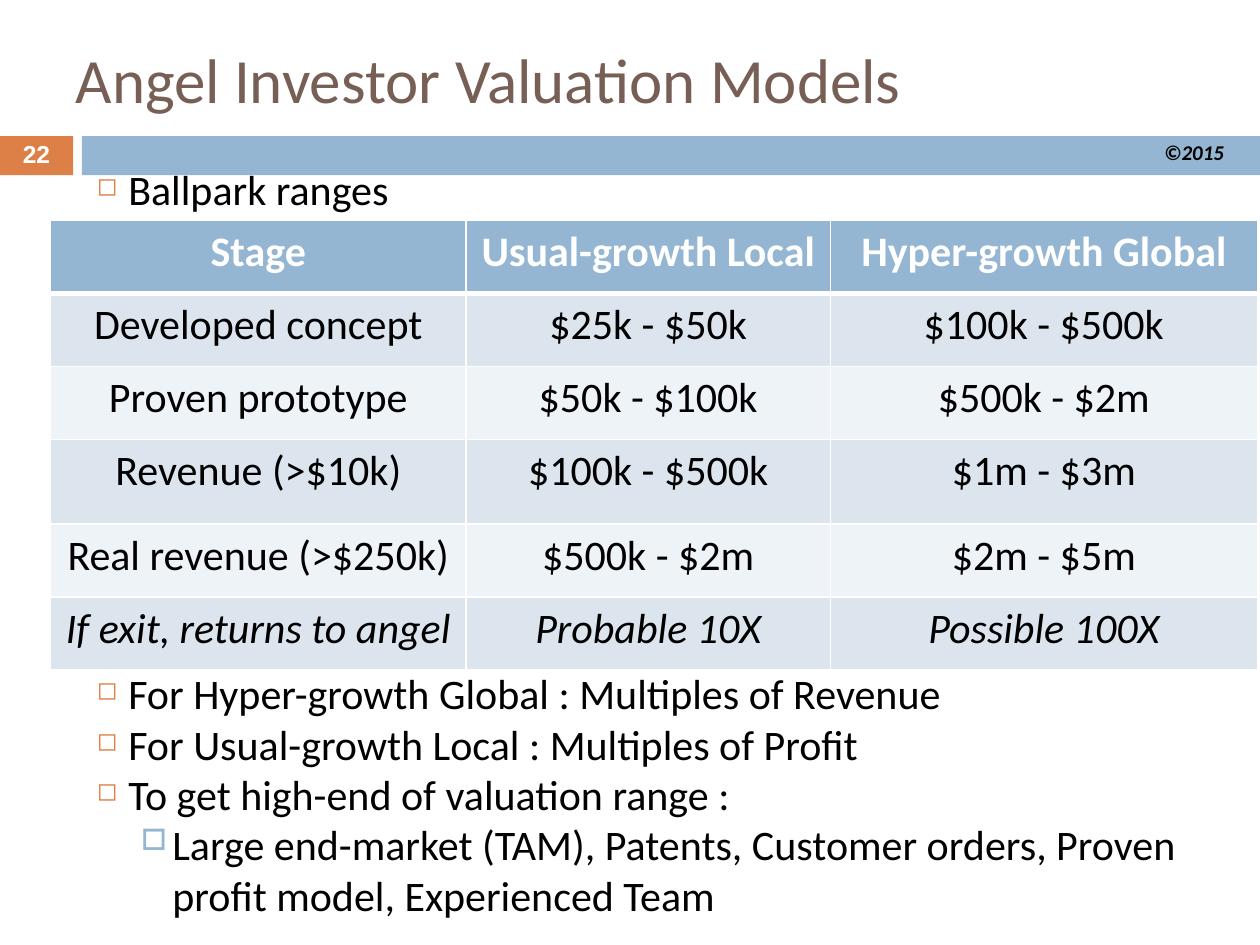
"""Build the angel investor valuation slide with its table of ballpark ranges."""
from dataclasses import dataclass

from lxml import etree
from pptx import Presentation
from pptx import util as u
from pptx.dml.color import RGBColor
from pptx.enum import shapes, text
from pptx.oxml import ns


@dataclass(frozen=True)
class Theme:
    font: str = "Calibri"
    number_font: str = "Arial"
    brown: str = "775F55"
    orange: str = "DD8047"
    blue: str = "94B6D2"
    dark_band: str = "DCE5EE"
    light_band: str = "EEF3F7"
    black: str = "000000"
    white: str = "FFFFFF"
    title_size: int = 36
    body_size: int = 24
    number_size: int = 14
    copyright_size: int = 12


theme = Theme()
Inches = u.Inches


def write(paragraph, words, size=theme.body_size, color=theme.black, font=theme.font,
          bold=False, italic=False, align=text.PP_ALIGN.LEFT, spacing=None, bullet=None):
    paragraph.alignment = align
    if spacing:
        paragraph.line_spacing = spacing
    run = paragraph.add_run()
    run.text = words
    run.font.name, run.font.size = font, u.Pt(size)
    run.font.bold, run.font.italic = bold, italic
    run.font.color.rgb = RGBColor.from_string(color)
    if bullet:
        character, bullet_color, percent, indent = bullet
        properties = paragraph._p.get_or_add_pPr()
        properties.set("marL", str(Inches(indent)))
        properties.set("indent", str(Inches(-0.25)))
        color_element = etree.SubElement(properties, ns.qn("a:buClr"))
        etree.SubElement(color_element, ns.qn("a:srgbClr"), val=bullet_color)
        etree.SubElement(properties, ns.qn("a:buSzPct"), val=str(percent * 1000))
        etree.SubElement(properties, ns.qn("a:buChar"), char=character)


def add_border(cell, side, width):
    line = etree.SubElement(cell._tc.get_or_add_tcPr(), ns.qn(f"a:ln{side}"), w=str(u.Pt(width)))
    fill = etree.SubElement(line, ns.qn("a:solidFill"))
    etree.SubElement(fill, ns.qn("a:srgbClr"), val=theme.white)


presentation = Presentation()
presentation.slide_width, presentation.slide_height = Inches(10), Inches(7.5)
slide = presentation.slides.add_slide(presentation.slide_layouts[5])

for left, width, color in [(0, 0.58, theme.orange), (0.65, 9.35, theme.blue)]:
    bar = slide.shapes.add_shape(shapes.MSO_SHAPE.RECTANGLE, Inches(left), Inches(1.08),
                                 Inches(width), Inches(0.31))
    bar.shadow.inherit = False
    bar.fill.solid()
    bar.fill.fore_color.rgb = RGBColor.from_string(color)
    bar.line.fill.background()

title = slide.shapes.title
title.left, title.top, title.width, title.height = Inches(0.5), 0, Inches(9.75), Inches(1.25)
title.text_frame.vertical_anchor = text.MSO_ANCHOR.MIDDLE
write(title.text_frame.paragraphs[0], "Angel Investor Valuation Models",
      size=theme.title_size, color=theme.brown)

main_bullet = ("◻", theme.orange, 60, 0.25)
sub_bullet = ("□", theme.blue, 70, 0.6)
body = [
    (1.25, 0.5, [("Ballpark ranges", main_bullet)]),
    (5.25, 2.1, [
        ("For Hyper-growth Global : Multiples of Revenue", main_bullet),
        ("For Usual-growth Local : Multiples of Profit", main_bullet),
        ("To get high-end of valuation range :", main_bullet),
        ("Large end-market (TAM), Patents, Customer orders, Proven profit model, "
         "Experienced Team", sub_bullet),
    ]),
]
for top, height, items in body:
    frame = slide.shapes.add_textbox(Inches(0.67), Inches(top), Inches(9.17),
                                     Inches(height)).text_frame
    frame.word_wrap = True
    for index, (words, bullet) in enumerate(items):
        paragraph = frame.add_paragraph() if index else frame.paragraphs[0]
        write(paragraph, words, bullet=bullet)

number = slide.shapes.add_textbox(0, Inches(1.11), Inches(0.58), Inches(0.27)).text_frame
number.word_wrap = True
number.vertical_anchor = text.MSO_ANCHOR.MIDDLE
write(number.paragraphs[0], "22", size=theme.number_size, color=theme.white,
      font=theme.number_font, bold=True, align=text.PP_ALIGN.CENTER, spacing=0.7)

rows = [
    ("Stage", "Usual-growth Local", "Hyper-growth Global"),
    ("Developed concept", "$25k - $50k", "$100k - $500k"),
    ("Proven prototype", "$50k - $100k", "$500k - $2m"),
    ("Revenue (>$10k)", "$100k - $500k", "$1m - $3m"),
    ("Real revenue (>$250k)", "$500k - $2m", "$2m - $5m"),
    ("If exit, returns to angel", "Probable 10X", "Possible 100X"),
]
table = slide.shapes.add_table(len(rows), 3, Inches(0.4), Inches(1.75),
                               Inches(9.58), Inches(3.58)).table
for column, width in zip(table.columns, (3.3, 2.89, 3.39)):
    column.width = Inches(width)
for row_index, values in enumerate(rows):
    header, last = row_index == 0, row_index == len(rows) - 1
    table.rows[row_index].height = Inches(0.67 if row_index == 3 else 0.58)
    band = theme.dark_band if row_index % 2 else theme.light_band
    for column_index, value in enumerate(values):
        cell = table.cell(row_index, column_index)
        for side in "LRTB":
            thick = (header and side == "B") or (row_index == 1 and side == "T")
            add_border(cell, side, 3 if thick else 1)
        cell.fill.solid()
        cell.fill.fore_color.rgb = RGBColor.from_string(theme.blue if header else band)
        write(cell.text_frame.paragraphs[0], value, bold=header, italic=last,
              color=theme.white if header else theme.black, align=text.PP_ALIGN.CENTER)

copyright_frame = slide.shapes.add_textbox(Inches(9.14), Inches(1.1), Inches(0.71),
                                           Inches(0.27)).text_frame
copyright_frame.word_wrap = False
write(copyright_frame.paragraphs[0], "©2015", size=theme.copyright_size,
      bold=True, italic=True, spacing=0.8)

presentation.save("out.pptx")
